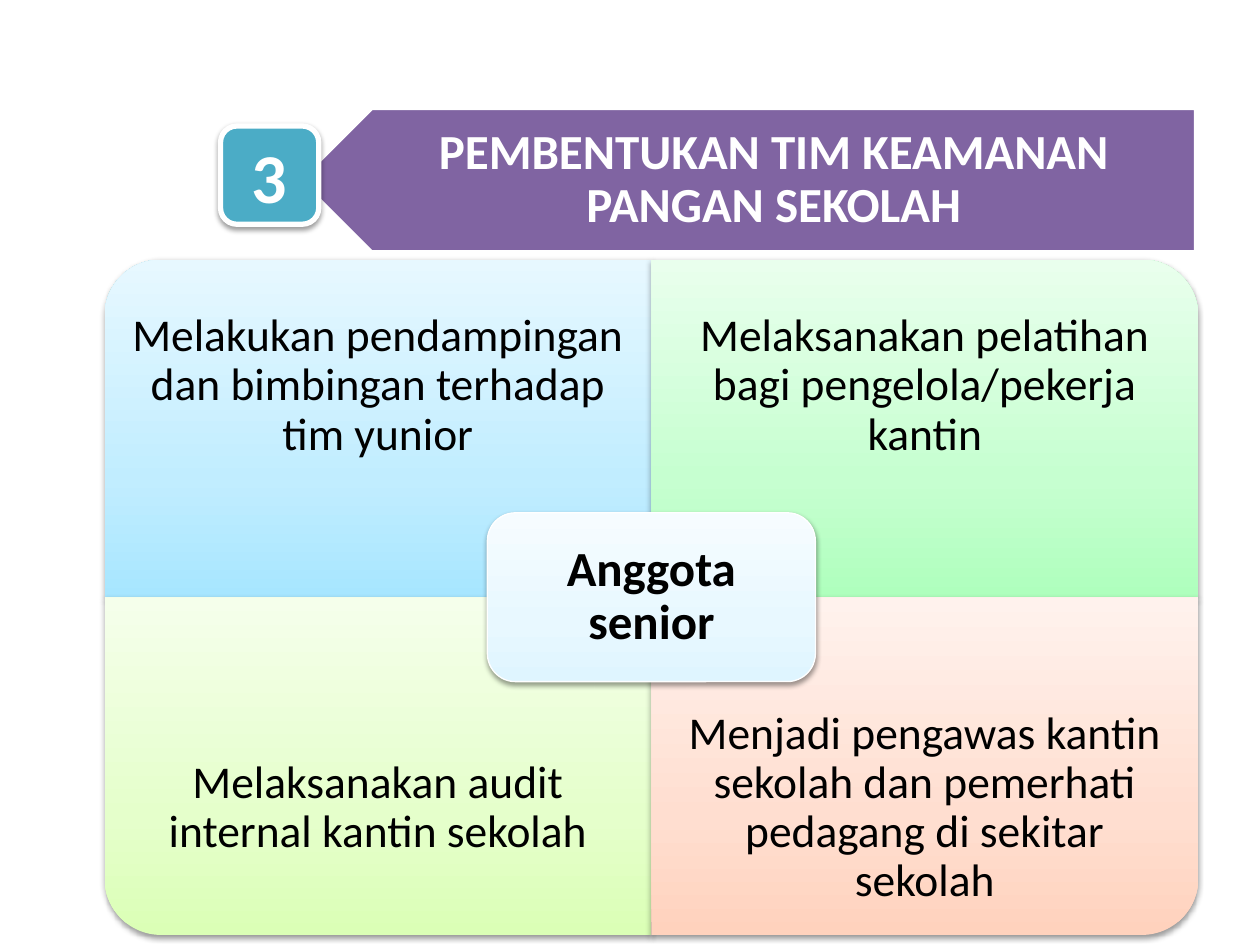
from dataclasses import dataclass
from lxml.etree import SubElement as Sub
from pptx import Presentation
from pptx.dml.color import RGBColor
from pptx.enum.shapes import MSO_SHAPE as Kind
from pptx.enum.text import MSO_ANCHOR as Anchor, PP_ALIGN as Align
from pptx.oxml.ns import qn
from pptx.util import Inches, Pt

WIDE, HIGH = 10, 7.5
LEFT, TOP = 0.83, 2.06          # corner of the 2 x 2 grid
COL, ROW = 4.34, 2.68           # size of a grid cell
TEXT = 0.75                     # share of a cell's height that holds text


@dataclass
class Box:
    x: float
    y: float
    w: float
    h: float


@dataclass
class Cell:
    col: int
    row: int
    turn: int
    tones: tuple
    words: str


CELLS = [
    Cell(0, 0, 270, ("A7E6FF", "C1EDFF", "E7F8FF"),
         "Melakukan pendampingan dan bimbingan terhadap tim yunior"),
    Cell(1, 0, 0, ("AFFFBD", "C6FFD0", "E9FFED"),
         "Melaksanakan pelatihan bagi pengelola/pekerja kantin"),
    Cell(0, 1, 180, ("DBFFB6", "E5FFCB", "F5FFEB"),
         "Melaksanakan audit internal kantin sekolah"),
    Cell(1, 1, 90, ("FFD2BD", "FFDED0", "FFF2ED"),
         "Menjadi pengawas kantin sekolah dan pemerhati pedagang di sekitar sekolah"),
]


def tint(code: str) -> RGBColor:
    return RGBColor.from_string(code)


def place(box: Box) -> tuple:
    return tuple(Inches(n) for n in (box.x, box.y, box.w, box.h))


def shade(shape, tones: tuple) -> None:
    """Fill with three tones, dark at the bottom, upright at any rotation."""
    grad = shape._element.spPr.makeelement(qn("a:gradFill"), {"rotWithShape": "0"})
    stops = Sub(grad, qn("a:gsLst"))
    for pos, tone in zip((0, 35, 100), tones):
        stop = Sub(stops, qn("a:gs"), pos=str(pos * 1000))
        Sub(stop, qn("a:srgbClr"), val=tone)
    Sub(grad, qn("a:lin"), ang=str(270 * 60000), scaled="0")
    shape._element.spPr.find(qn("a:prstGeom")).addnext(grad)


def drop(shape) -> None:
    """Cast a soft shadow straight down."""
    cast = Sub(shape._element.spPr.find(qn("a:effectLst")), qn("a:outerShdw"),
               blurRad=str(Pt(3.1)), dist=str(Pt(1.6)),
               dir=str(90 * 60000), rotWithShape="0")
    black = Sub(cast, qn("a:srgbClr"), val="000000")
    Sub(black, qn("a:alpha"), val="38000")


def draw(slide, kind, box: Box, fill, line: float = 0, turn: int = 0,
         cast: bool = True):
    """Draw a shape; fill is one hex colour or a tuple of three tones."""
    shape = slide.shapes.add_shape(kind, *place(box))
    shape.rotation = turn
    if isinstance(fill, tuple):
        shade(shape, fill)
    else:
        shape.fill.solid()
        shape.fill.fore_color.rgb = tint(fill)
    if line:
        shape.line.color.rgb = tint("FFFFFF")
        shape.line.width = Pt(line)
    else:
        shape.line.fill.background()
    shape.shadow.inherit = False
    if cast:
        drop(shape)
    return shape


def write(shape, words: str, size: int, color: str = "000000",
          bold: bool = False, pads: tuple = (0.1, 0.05, 0.1, 0.05),
          gap: float = 0.9) -> None:
    frame = shape.text_frame
    frame.word_wrap = True
    frame.vertical_anchor = Anchor.MIDDLE
    (frame.margin_left, frame.margin_top,
     frame.margin_right, frame.margin_bottom) = (Inches(n) for n in pads)
    para = frame.paragraphs[0]
    para.text = words
    para.alignment = Align.CENTER
    para.line_spacing = gap
    font = para.font
    font.name, font.size, font.bold = "Calibri", Pt(size), bold
    font.color.rgb = tint(color)


def label(slide, box: Box, *args, **opts) -> None:
    write(slide.shapes.add_textbox(*place(box)), *args, **opts)


def quarter(slide, cell: Cell) -> None:
    x, y = LEFT + cell.col * COL, TOP + cell.row * ROW
    w, h = (ROW, COL) if cell.turn % 180 else (COL, ROW)
    box = Box(x + (COL - w) / 2, y + (ROW - h) / 2, w, h)
    draw(slide, Kind.ROUND_1_RECTANGLE, box, cell.tones, turn=cell.turn)
    top = y + cell.row * ROW * (1 - TEXT)
    label(slide, Box(x, top, COL, ROW * TEXT), cell.words, 26, pads=(0.2,) * 4)


def center(slide) -> None:
    w, h, pad = COL * 0.6, ROW / 2, 0.065
    x, y = LEFT + COL - w / 2, TOP + ROW - h / 2
    draw(slide, Kind.ROUNDED_RECTANGLE, Box(x, y, w, h),
         ("DFF5FF", "E8F8FF", "F6FCFF"), line=0.75)
    label(slide, Box(x + pad, y + pad, w - 2 * pad, h - 2 * pad),
          "Anggota senior", 28, bold=True, pads=(0.12,) * 4)


def header(slide) -> None:
    draw(slide, Kind.PENTAGON, Box(2.38, 0.86, 7.11, 1.14), "8064A2",
         line=2, turn=180, cast=False)
    label(slide, Box(2.61, 0.86, 6.87, 1.14),
          "PEMBENTUKAN TIM KEAMANAN PANGAN SEKOLAH", 28, "FFFFFF", True,
          (0.35, 0.08, 0.16, 0.08))
    badge = draw(slide, Kind.ROUNDED_RECTANGLE, Box(1.75, 1, 0.78, 0.78),
                 "4BACC6", line=3)
    write(badge, "3", 40, "FFFFFF", True, gap=1.0)


def main() -> None:
    deck = Presentation()
    deck.slide_width, deck.slide_height = Inches(WIDE), Inches(HIGH)
    slide = deck.slides.add_slide(deck.slide_layouts[6])
    for cell in CELLS:
        quarter(slide, cell)
    center(slide)
    header(slide)
    deck.save("out.pptx")


if __name__ == "__main__":
    main()
